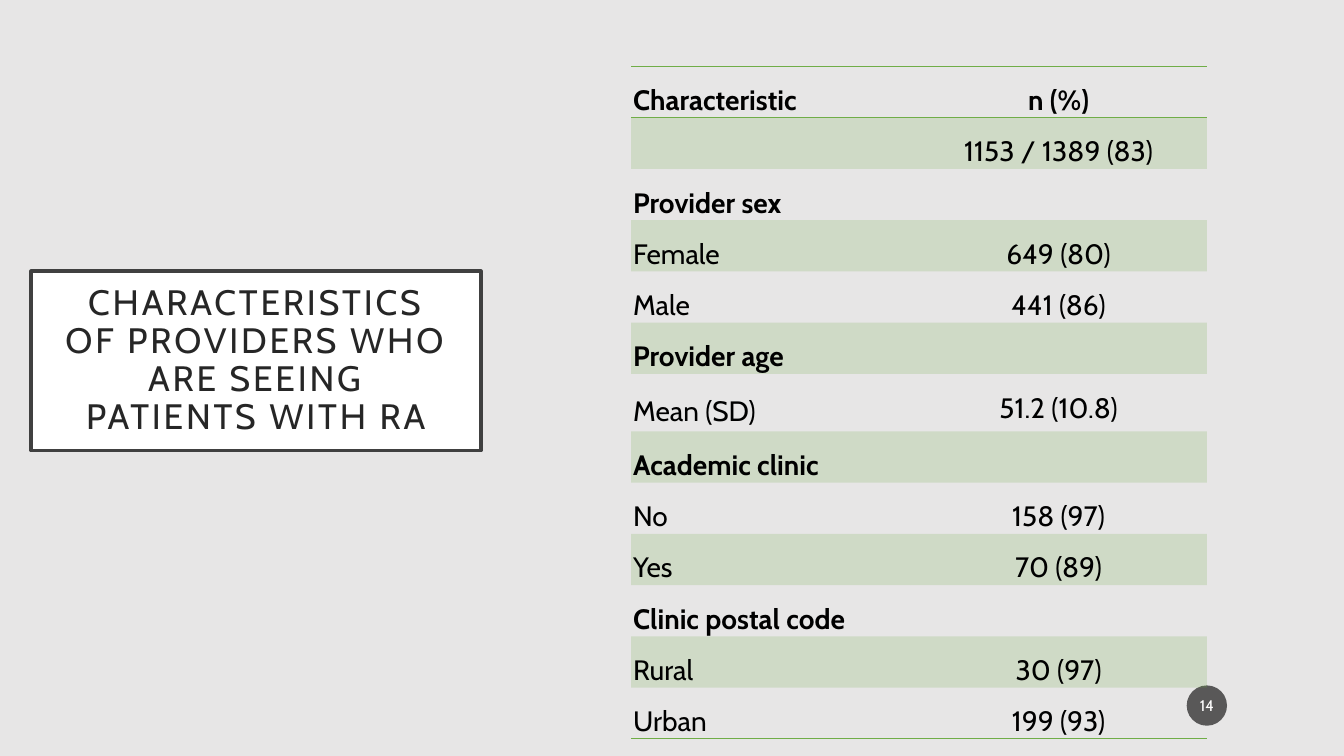
import pptx
import pptx.util
import pptx.dml.color
import pptx.enum.shapes
import pptx.enum.text
import pptx.oxml
import pptx.oxml.ns
from pptx.util import Inches

RGBColor = pptx.dml.color.RGBColor
BACKGROUND = RGBColor(0xE7, 0xE6, 0xE6)
WHITE = RGBColor(0xFF, 0xFF, 0xFF)
BLACK = RGBColor(0, 0, 0)
TITLE_TEXT = RGBColor(0x26, 0x26, 0x26)
TITLE_LINE = RGBColor(0x40, 0x40, 0x40)
BADGE = RGBColor(0x1D, 0x1D, 0x1D)
GREEN = RGBColor(0x70, 0xAD, 0x47)

NO_GRID_STYLE = "{2D5ABB26-0587-4C30-8999-92F81FD0307C}"
CENTER = pptx.enum.text.PP_ALIGN.CENTER
LEFT = pptx.enum.text.PP_ALIGN.LEFT
MIDDLE = pptx.enum.text.MSO_ANCHOR.MIDDLE
TOP = pptx.enum.text.MSO_ANCHOR.TOP

# A row without a value is a group heading.
ROWS = [
    ("Characteristic", "n (%)"),
    ("", "1153 / 1389 (83)"),
    ("Provider sex", ""),
    ("Female", "649 (80)"),
    ("Male", "441 (86)"),
    ("Provider age", ""),
    ("Mean (SD)", "51.2 (10.8)"),
    ("Academic clinic", ""),
    ("No", "158 (97)"),
    ("Yes", "70 (89)"),
    ("Clinic postal code", ""),
    ("Rural", "30 (97)"),
    ("Urban", "199 (93)"),
]
ROW_HEIGHT = 0.47
SPECIAL_HEIGHTS = {0: 0.49, 6: 0.57}


def set_alpha(fill, percent):
    """Make a solid fill partly transparent."""
    color = fill._xPr.find(".//" + pptx.oxml.ns.qn("a:srgbClr"))
    alpha = pptx.oxml.parse_xml(f'<a:alpha {pptx.oxml.ns.nsdecls("a")} val="{percent * 1000}"/>')
    color.append(alpha)


def add_border(cell, side):
    """Draw a green line on one side ("T" or "B") of a cell."""
    border = pptx.oxml.parse_xml(
        f'<a:ln{side} {pptx.oxml.ns.nsdecls("a")} w="12700"><a:solidFill>'
        f'<a:srgbClr val="{GREEN}"/></a:solidFill></a:ln{side}>')
    # Borders come before the fill, top before bottom.
    tcPr = cell._tc.get_or_add_tcPr()
    tcPr.insert(len(tcPr.findall(pptx.oxml.ns.qn("a:lnT"))), border)


class SlideBuilder:
    def __init__(self, prs, font):
        self.font = font
        self.s = prs.slides.add_slide(prs.slide_layouts[5])
        self.s.background.fill.solid()
        self.s.background.fill.fore_color.rgb = BACKGROUND

    def add_text(self, tf, text, size, color, align, bold=False, line_spacing=1.0):
        p = tf.paragraphs[0]
        p.alignment = align
        p.line_spacing = line_spacing
        r = p.add_run()
        r.text = text
        r.font.name = self.font
        r.font.size = pptx.util.Pt(size)
        r.font.bold = bold
        r.font.color.rgb = color
        return r

    def frame(self, sp, margin_x, margin_y):
        tf = sp.text_frame
        tf.word_wrap = True
        tf.auto_size = pptx.enum.text.MSO_AUTO_SIZE.NONE
        tf.vertical_anchor = MIDDLE
        tf.margin_left = tf.margin_right = Inches(margin_x)
        tf.margin_top = tf.margin_bottom = Inches(margin_y)
        return tf

    def title(self, text, left, top, width, height):
        sp = self.s.shapes.title
        sp.left, sp.top = Inches(left), Inches(top)
        sp.width, sp.height = Inches(width), Inches(height)
        sp.fill.solid()
        sp.fill.fore_color.rgb = WHITE
        sp.line.color.rgb = TITLE_LINE
        sp.line.width = pptx.util.Pt(2.5)
        tf = self.frame(sp, 0.3, 0.2)
        r = self.add_text(tf, text, 25.2, TITLE_TEXT, CENTER, line_spacing=0.9)
        r.font._element.set("spc", "200")

    def badge(self, text, left, top, size):
        sp = self.s.shapes.add_shape(
            pptx.enum.shapes.MSO_SHAPE.OVAL,
            Inches(left), Inches(top), Inches(size), Inches(size))
        sp.shadow.inherit = False
        sp.fill.solid()
        sp.fill.fore_color.rgb = BADGE
        set_alpha(sp.fill, 70)
        sp.line.fill.background()
        self.add_text(self.frame(sp, 0.02, 0.05), text, 11, WHITE, CENTER)

    def table(self, rows, left, top, widths, heights):
        shape = self.s.shapes.add_table(
            len(rows), len(widths), Inches(left), Inches(top),
            Inches(sum(widths)), Inches(sum(heights)))
        table = shape.table
        table._tbl.tblPr.find(pptx.oxml.ns.qn("a:tableStyleId")).text = NO_GRID_STYLE
        table.first_row = table.horz_banding = False
        for column, width in zip(table.columns, widths):
            column.width = Inches(width)
        for i, (row, height) in enumerate(zip(rows, heights)):
            table.rows[i].height = Inches(height)
            for j, text in enumerate(row):
                self.cell(table.cell(i, j), text, i, j,
                          bold=i == 0 or not row[1], last=i == len(rows) - 1)

    def cell(self, cell, text, i, j, bold, last):
        cell.margin_left = cell.margin_right = Inches(0.02)
        cell.margin_top = cell.margin_bottom = 0
        cell.vertical_anchor = TOP if j == 1 and i > 1 else MIDDLE
        if i % 2:
            cell.fill.solid()
            cell.fill.fore_color.rgb = GREEN
            set_alpha(cell.fill, 20)
        else:
            cell.fill.background()
        if i == 0:
            add_border(cell, "T")
        if i == 0 or last:
            add_border(cell, "B")
        if text:
            self.add_text(cell.text_frame, text, 20, BLACK,
                          CENTER if j else LEFT, bold, line_spacing=1.5)


def main():
    prs = pptx.Presentation()
    prs.slide_width, prs.slide_height = Inches(13.33), Inches(7.5)
    slide = SlideBuilder(prs, "Cabin")
    slide.title("CHARACTERISTICS OF PROVIDERS WHO ARE SEEING PATIENTS WITH RA",
                0.31, 2.69, 4.46, 1.78)
    slide.badge("14", 11.77, 6.8, 0.4)
    heights = [SPECIAL_HEIGHTS.get(i, ROW_HEIGHT) for i in range(len(ROWS))]
    slide.table(ROWS, 6.26, 0.66, [2.77, 2.94], heights)
    prs.save("out.pptx")


if __name__ == "__main__":
    main()
